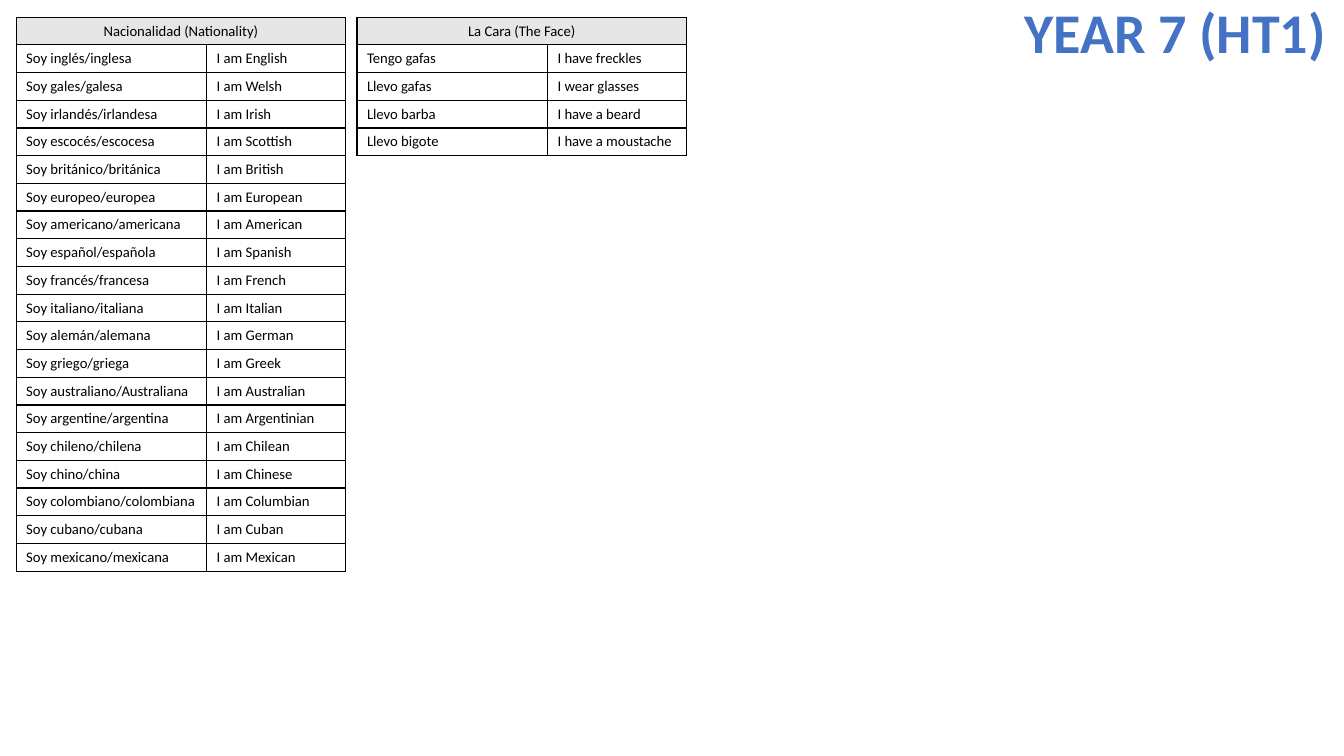
from dataclasses import dataclass

from lxml.etree import SubElement
from pptx import Presentation
from pptx.dml.color import RGBColor
from pptx.enum.text import MSO_ANCHOR as Anchor, MSO_AUTO_SIZE as AutoSize, PP_ALIGN as Align
from pptx.oxml.ns import qn
from pptx.util import Inches, Pt

COLORS = {"text": "000000", "border": "000000", "header": "E7E6E6",
          "title": "4472C4", "outline": "FFFFFF"}
FONT = "Calibri"
TABLE_TOP = 0.17
COLUMN_WIDTHS = (1.89, 1.38)
ROW_HEIGHT = 5.5 / 20


@dataclass
class Vocabulary:
    heading: str
    left: float
    pairs: list[tuple[str, str]]


VOCABULARIES = [
    Vocabulary("Nacionalidad (Nationality)", 0.16, [
        ("Soy inglés/inglesa", "I am English"),
        ("Soy gales/galesa", "I am Welsh"),
        ("Soy irlandés/irlandesa", "I am Irish"),
        ("Soy escocés/escocesa", "I am Scottish"),
        ("Soy británico/británica", "I am British"),
        ("Soy europeo/europea", "I am European"),
        ("Soy americano/americana", "I am American"),
        ("Soy español/española", "I am Spanish"),
        ("Soy francés/francesa", "I am French"),
        ("Soy italiano/italiana", "I am Italian"),
        ("Soy alemán/alemana", "I am German"),
        ("Soy griego/griega", "I am Greek"),
        ("Soy australiano/Australiana", "I am Australian"),
        ("Soy argentine/argentina", "I am Argentinian"),
        ("Soy chileno/chilena", "I am Chilean"),
        ("Soy chino/china", "I am Chinese"),
        ("Soy colombiano/colombiana", "I am Columbian"),
        ("Soy cubano/cubana", "I am Cuban"),
        ("Soy mexicano/mexicana", "I am Mexican"),
    ]),
    Vocabulary("La Cara (The Face)", 3.54, [
        ("Tengo gafas", "I have freckles"),
        ("Llevo gafas", "I wear glasses"),
        ("Llevo barba", "I have a beard"),
        ("Llevo bigote", "I have a moustache"),
    ]),
]


def write_text(frame, text: str, *, size: float = 10.5, color: str = "text",
               bold: bool = False, align: Align = Align.LEFT):
    para = frame.paragraphs[0]
    para.alignment = align
    span = para.add_run()
    span.text = text
    span.font.name = FONT
    span.font.size = Pt(size)
    span.font.bold = bold
    span.font.color.rgb = RGBColor.from_string(COLORS[color])
    return span


def add_line(parent, tag: str, color: str, width: float, index: int) -> None:
    line = SubElement(parent, qn(tag), w=str(Pt(width)))
    fill = SubElement(line, qn("a:solidFill"))
    SubElement(fill, qn("a:srgbClr"), val=COLORS[color])
    parent.insert(index, line)


def format_cell(cell) -> None:
    cell.margin_top = cell.margin_bottom = Inches(0.04)
    cell.vertical_anchor = Anchor.MIDDLE
    properties = cell._tc.get_or_add_tcPr()
    for index, tag in enumerate(("a:lnL", "a:lnR", "a:lnT", "a:lnB")):
        add_line(properties, tag, "border", 1, index)
    cell.fill.background()


def add_vocabulary(page, vocabulary: Vocabulary) -> None:
    row_count = len(vocabulary.pairs) + 1
    table = page.shapes.add_table(
        row_count, 2, Inches(vocabulary.left), Inches(TABLE_TOP),
        Inches(sum(COLUMN_WIDTHS)), Inches(ROW_HEIGHT * row_count)).table
    table.first_row = table.horz_banding = False
    for column, width in zip(table.columns, COLUMN_WIDTHS):
        column.width = Inches(width)
    for row in table.rows:
        row.height = Inches(ROW_HEIGHT)
        for cell in row.cells:
            format_cell(cell)

    # Heading across both columns
    heading = table.cell(0, 0)
    heading.merge(table.cell(0, 1))
    heading.fill.solid()
    heading.fill.fore_color.rgb = RGBColor.from_string(COLORS["header"])
    write_text(heading.text_frame, vocabulary.heading, align=Align.CENTER)

    # Spanish and English pairs
    for row, pair in enumerate(vocabulary.pairs, start=1):
        for column, phrase in enumerate(pair):
            write_text(table.cell(row, column).text_frame, phrase)


def add_title(page, text: str) -> None:
    box = page.shapes.add_textbox(Inches(4.99), Inches(-0.07), Inches(13.33), Inches(0.77))
    frame = box.text_frame
    frame.word_wrap = True
    frame.auto_size = AutoSize.SHAPE_TO_FIT_TEXT
    span = write_text(frame, text, size=40, color="title", bold=True, align=Align.CENTER)
    add_line(span.font._element, "a:ln", "outline", 0.75, 0)


def main() -> None:
    deck = Presentation()
    deck.slide_width, deck.slide_height = Inches(13.33), Inches(7.5)
    page = deck.slides.add_slide(deck.slide_layouts[6])
    nationality, face = VOCABULARIES
    add_vocabulary(page, nationality)
    add_title(page, "YEAR 7 (HT1)")
    add_vocabulary(page, face)
    deck.save("out.pptx")


if __name__ == "__main__":
    main()
